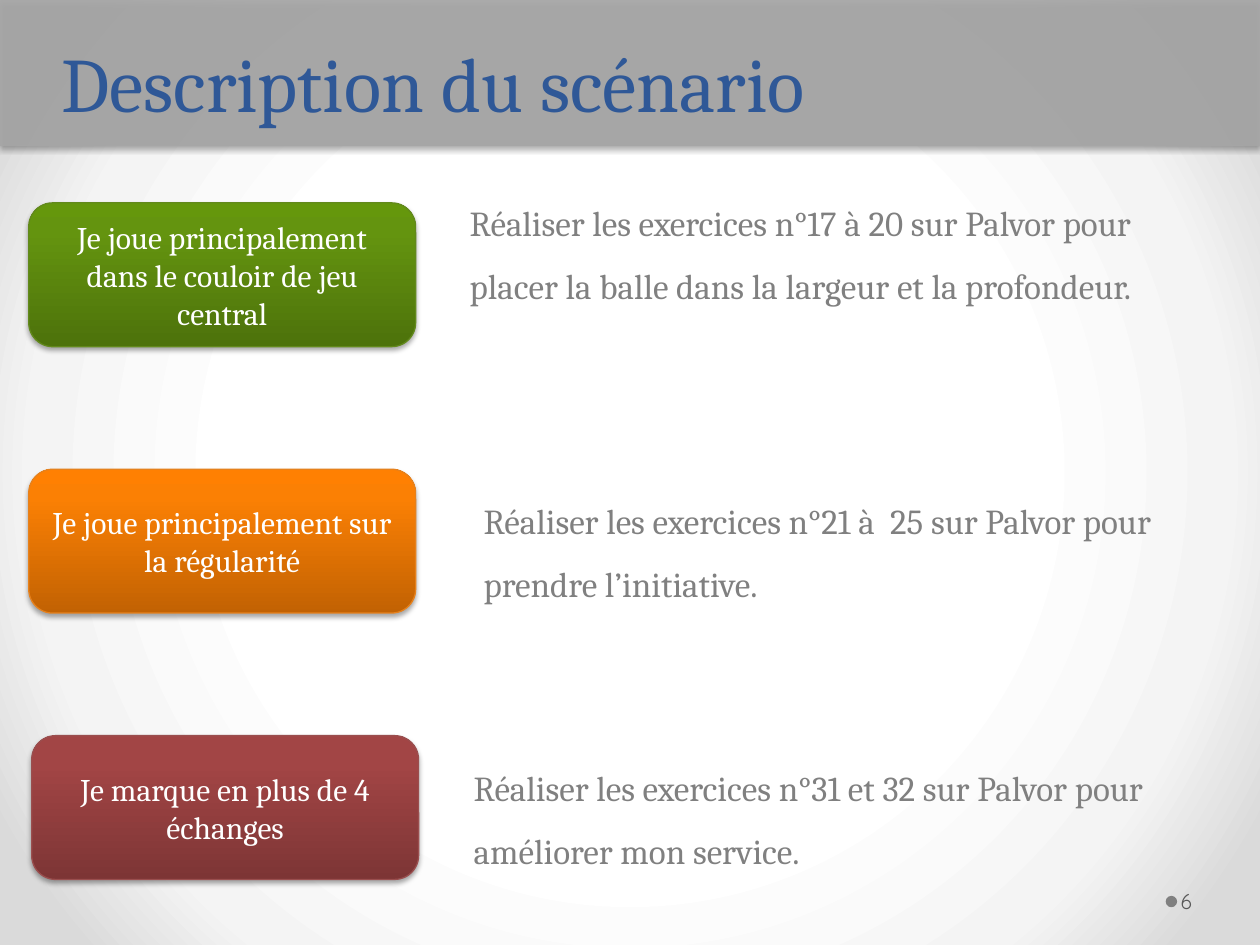
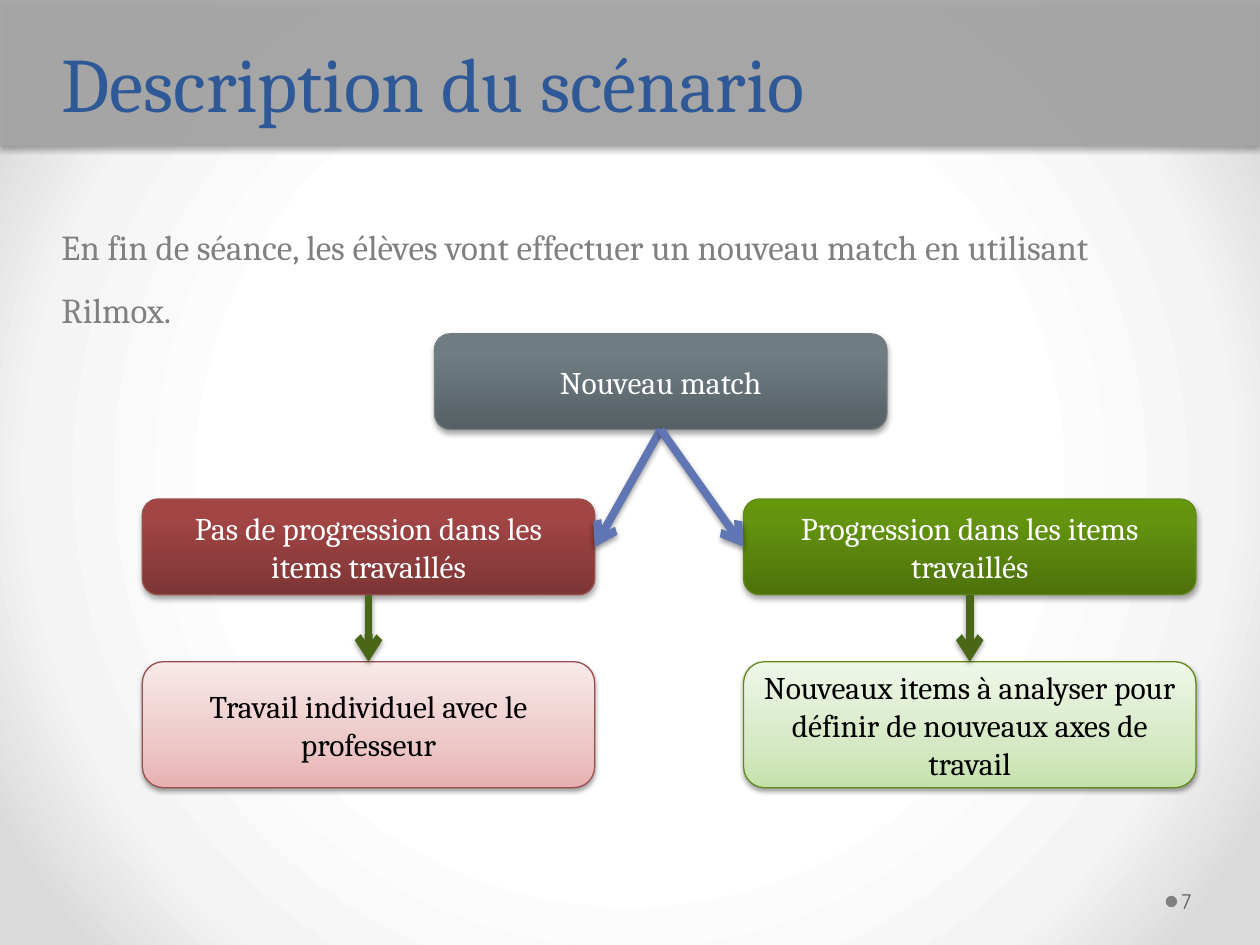
from pptx import Presentation
from pptx.dml.color import RGBColor
from pptx.enum.shapes import MSO_CONNECTOR, MSO_SHAPE
from pptx.enum.text import MSO_ANCHOR, PP_ALIGN
from pptx.oxml import parse_xml
from pptx.oxml.ns import nsdecls
from pptx.util import Cm, Pt

TITLE = "Description du scénario"
FIRST_NUMBER = 6

# label, colour, left of label, exercise, left, top and height of exercise
SITUATIONS = [
    ("Je joue principalement dans le couloir de jeu central", "green", 0.58,
     "Réaliser les exercices n°17 à 20 sur Palvor pour placer la balle "
     "dans la largeur et la profondeur.", 9.22, 3.51, 4.04),
    ("Je joue principalement sur la régularité", "orange", 0.58,
     "Réaliser les exercices n°21 à  25 sur Palvor pour prendre l’initiative.",
     9.5, 9.53, 2.74),
    ("Je marque en plus de 4 échanges", "red", 0.64,
     "Réaliser les exercices n°31 et 32 sur Palvor pour améliorer mon service.",
     9.3, 14.91, 2.74),
]
LABEL_TOP, LABEL_PITCH, LABEL_SIZE = 4.09, 5.37, (7.8, 2.9)

INTRO = "En fin de séance, les élèves vont effectuer un nouveau match en utilisant Rilmox."
MATCH = "Nouveau match"
# left, verdict, its colour, outcome, its colour, side of the verdict that is reached
BRANCHES = [
    (2.87, "Pas de progression dans les items travaillés", "red",
     "Travail individuel avec le professeur", "pale red", 3),
    (14.99, "Progression dans les items travaillés", "green",
     "Nouveaux items à analyser pour définir de nouveaux axes de travail",
     "pale green", 1),
]
NODE_W, NODE_H, OUTCOME_H = 9.12, 1.93, 2.54
MATCH_TOP, VERDICT_TOP, OUTCOME_TOP = 6.73, 10.06, 13.34
TOP, BOTTOM = 0, 2  # connection sites of a rounded rectangle

# gradient stops from bottom to top, outline, text colour
DARK, PALE = (0, 80, 100), (0, 35, 100)
STYLES = {
    "green": (DARK, ("4D720B", "64940F", "65970C"), "62891C", "FFFFFF"),
    "orange": (DARK, ("C26203", "FB8004", "FF8002"), "E6811C", "FFFFFF"),
    "red": (DARK, ("7D3535", "A24545", "A44343"), "9A4E4E", "FFFFFF"),
    "slate": (DARK, ("566065", "6F7D83", "6F7E84"), "727D82", "FFFFFF"),
    "pale green": (PALE, ("C5E1AB", "D6E9C5", "EFF7E9"), "62891C", "000000"),
    "pale red": (PALE, ("E8B0B0", "EDC8C8", "F9E9E9"), "9A4E4E", "000000"),
}
BACKDROP = (50, 76, 92), ("FFFFFF", "F4F4F4", "DADADA")
UPWARD = '<a:lin {} ang="16200000" scaled="0"/>'
RADIAL = ('<a:path {} path="circle"><a:fillToRect l="50000" t="50000" '
          'r="50000" b="50000"/></a:path>')

TITLE_FONT = {"size": Pt(44), "name": "Cambria", "color": "2F5897"}
BODY_FONT = {"size": Pt(20), "name": "Cambria", "color": "808080"}
BOX_FONT = {"size": Pt(18), "name": "Cambria"}
NUMBER_FONT = {"size": Pt(12), "name": "Quicksand", "color": "595959"}
NUMBER_MARGINS = {"margin_left": Cm(0.08), "margin_right": Cm(0.13)}


def rgb(value):
    return RGBColor.from_string(value)


def set_gradient(owner, fill, positions, colors, direction):
    fill.gradient()
    grad = owner._element.xpath(".//a:gradFill")[0]
    grad.clear()
    stops = "".join(f'<a:gs pos="{p * 1000}"><a:srgbClr val="{c}"/></a:gs>'
                    for p, c in zip(positions, colors))
    grad.append(parse_xml(f'<a:gsLst {nsdecls("a")}>{stops}</a:gsLst>'))
    grad.append(parse_xml(direction.format(nsdecls("a"))))


def add_shadow(shape, alpha=35, dist=1.8):
    """Cast a soft shadow downwards; call after fill and line are set."""
    shape._element.spPr.append(parse_xml(
        f'<a:effectLst {nsdecls("a")}><a:outerShdw blurRad="{Pt(3.1)}" '
        f'dist="{Pt(dist)}" dir="5400000" rotWithShape="0"><a:srgbClr val="000000">'
        f'<a:alpha val="{alpha * 1000}"/></a:srgbClr></a:outerShdw></a:effectLst>'))


def write(shape, text, font, anchor=MSO_ANCHOR.TOP, margins=None, **paragraph):
    tf = shape.text_frame
    for key, value in {"word_wrap": True, "vertical_anchor": anchor,
                       **(margins or {})}.items():
        setattr(tf, key, value)
    p = tf.paragraphs[0]
    for key, value in paragraph.items():
        setattr(p, key, value)
    r = p.add_run()
    r.text = text
    for key, value in font.items():
        if key == "color":
            r.font.color.rgb = rgb(value)
        else:
            setattr(r.font, key, value)


def add_text(s, at, text, font, **layout):
    write(s.shapes.add_textbox(*map(Cm, at)), text, font, **layout)


def add_plain(s, kind, at, color):
    sp = s.shapes.add_shape(kind, *map(Cm, at))
    sp.fill.solid()
    sp.fill.fore_color.rgb = rgb(color)
    sp.line.fill.background()
    return sp


def add_box(s, at, text, style):
    positions, colors, outline, text_color = STYLES[style]
    sp = s.shapes.add_shape(MSO_SHAPE.ROUNDED_RECTANGLE, *map(Cm, at))
    set_gradient(sp, sp.fill, positions, colors, UPWARD)
    sp.line.color.rgb = rgb(outline)
    sp.line.width = Pt(0.75)
    if positions == PALE:
        add_shadow(sp, 38, 1.6)
    else:
        add_shadow(sp)
    write(sp, text, {**BOX_FONT, "color": text_color},
          anchor=MSO_ANCHOR.MIDDLE, alignment=PP_ALIGN.CENTER)
    return sp


def add_arrow(s, start, start_site, end, end_site, color):
    line = s.shapes.add_connector(MSO_CONNECTOR.STRAIGHT, 0, 0, 0, 0)
    line.begin_connect(start, start_site)
    line.end_connect(end, end_site)
    line.line.color.rgb = rgb(color)
    line.line.width = Pt(4.5)
    line.line._get_or_add_ln().append(
        parse_xml(f'<a:tailEnd {nsdecls("a")} type="arrow"/>'))
    add_shadow(line, 38, 1.6)


def add_slide(prs, number):
    """Add a slide with the band, title and page number that all share."""
    s = prs.slides.add_slide(prs.slide_layouts[6])
    band = add_plain(s, MSO_SHAPE.RECTANGLE, (0, 0, 25.4, 2.95), "A6A6A6")
    band._element.xpath(".//a:solidFill/a:srgbClr")[0].append(
        parse_xml(f'<a:alpha {nsdecls("a")} val="92000"/>'))
    add_shadow(band)
    dot = add_plain(s, MSO_SHAPE.OVAL, (23.5, 18.06, 0.23, 0.23), "808080")
    dot.shadow.inherit = False
    add_text(s, (0.99, 0.25, 23.72, 2.46), TITLE, TITLE_FONT,
             anchor=MSO_ANCHOR.BOTTOM, line_spacing=Pt(58))
    add_text(s, (23.72, 17.65, 1.55, 1.02), str(number), NUMBER_FONT,
             anchor=MSO_ANCHOR.MIDDLE, margins=NUMBER_MARGINS)
    return s


def fill_situations(s):
    for i, (label, style, left, exercise, x, y, height) in enumerate(SITUATIONS):
        add_box(s, (left, LABEL_TOP + i * LABEL_PITCH, *LABEL_SIZE), label, style)
        add_text(s, (x, y, 14.5, height), exercise, BODY_FONT, line_spacing=1.5)


def fill_match(s):
    add_text(s, (0.99, 3.99, 23.11, 2.74), INTRO, BODY_FONT, line_spacing=1.5)
    match = add_box(s, (8.76, MATCH_TOP, NODE_W, NODE_H), MATCH, "slate")
    for x, verdict, style, outcome, pale, side in BRANCHES:
        upper = add_box(s, (x, VERDICT_TOP, NODE_W, NODE_H), verdict, style)
        lower = add_box(s, (x, OUTCOME_TOP, NODE_W, OUTCOME_H), outcome, pale)
        add_arrow(s, match, BOTTOM, upper, side, "6076B4")
        add_arrow(s, upper, BOTTOM, lower, TOP, "4A6717")


def main():
    prs = Presentation()
    prs.slide_width, prs.slide_height = Cm(25.4), Cm(19.05)
    master = prs.slide_master
    set_gradient(master, master.background.fill, *BACKDROP, RADIAL)
    for number, fill_content in enumerate((fill_situations, fill_match), FIRST_NUMBER):
        fill_content(add_slide(prs, number))
    prs.save("out.pptx")


if __name__ == "__main__":
    main()
